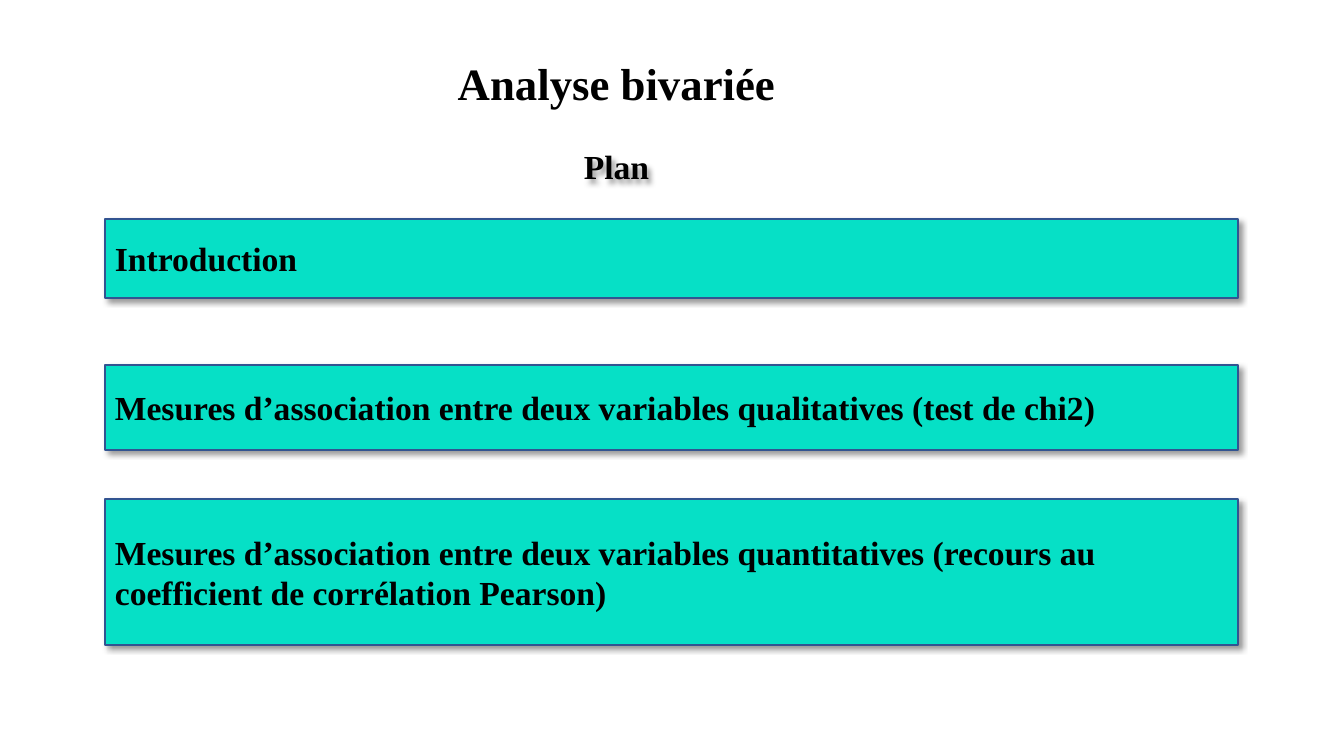
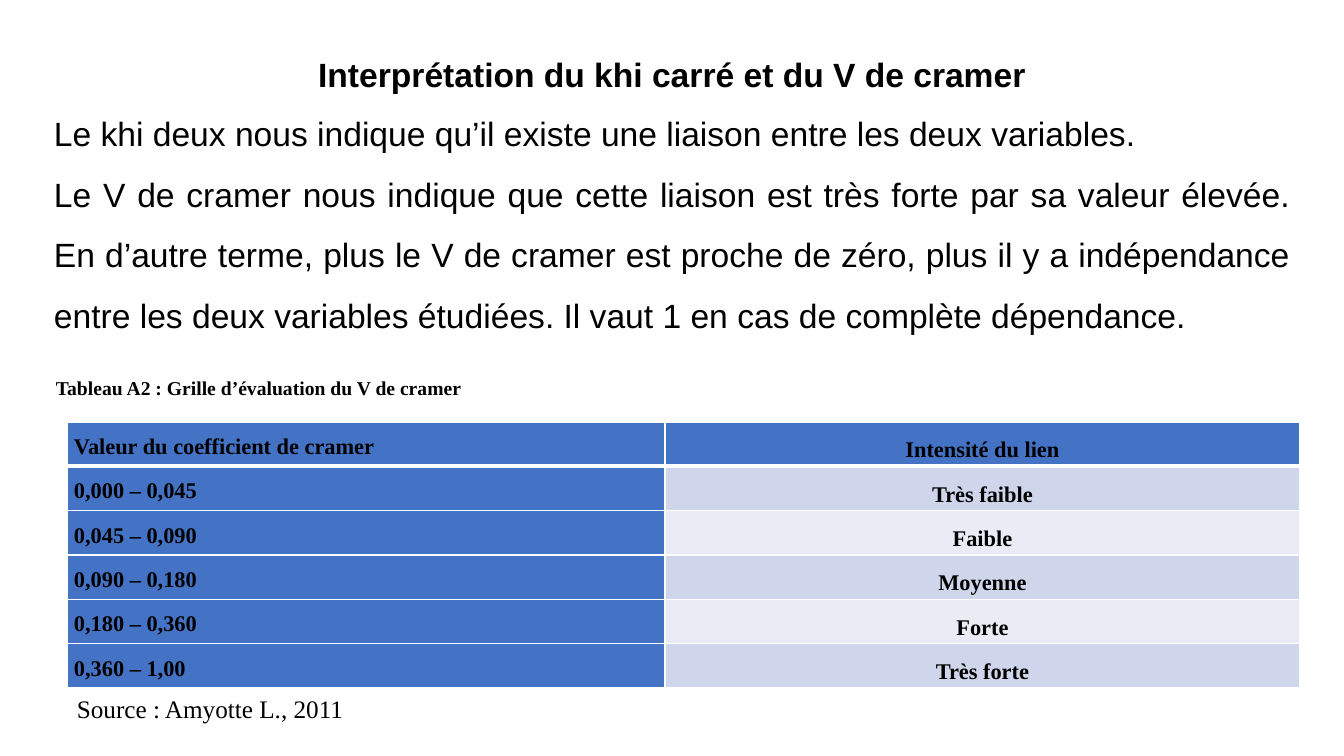
"""Build two slides on bivariate analysis: the plan and how to read Cramer's V."""
from lxml.etree import SubElement
from pptx import Presentation
from pptx.dml.color import RGBColor
from pptx.enum.shapes import MSO_SHAPE
from pptx.enum.text import MSO_ANCHOR, MSO_AUTO_SIZE, PP_ALIGN
from pptx.oxml.ns import qn
from pptx.util import Emu, Pt

SLIDE_W, SLIDE_H = 1344, 756
EMU_PER_PX = 12192000 / SLIDE_W
SERIF, SANS = "Times New Roman", "Arial"
COLORS = {
    "text": "000000", "bar": "06E0C6", "bar_line": "325491", "shadow": "000000",
    "head": "4472C4", "odd": "CFD5EA", "even": "E9EBF5", "border": "FFFFFF",
}

PLAN_TITLE = ("Analyse bivariée", (300, 43, 633, 79))
PLAN_SUBTITLE = ("Plan", (300, 127, 633, 79))
PLAN_BARS = [
    ("Introduction", 219, 79),
    ("Mesures d’association entre deux variables qualitatives (test de chi2)", 365, 85),
    ("Mesures d’association entre deux variables quantitatives "
     "(recours au coefficient de corrélation Pearson)", 499, 146),
]
BAR_LEFT, BAR_W = 105, 1133

CRAMER_TITLE = ("Interprétation du khi carré et du V de cramer", (44, 44, 1256, 60))
CRAMER_BODY = ([
    "Le khi deux nous indique qu’il existe une liaison entre les deux variables.",
    "Le V de cramer nous indique que cette liaison est très forte par sa valeur élevée. "
    "En d’autre terme, plus le V de cramer est proche de zéro, plus il y a indépendance "
    "entre les deux variables étudiées. Il vaut 1 en cas de complète dépendance.",
], (44, 90, 1256, 250))
CAPTION = ("Tableau A2 : Grille d’évaluation du V de cramer", (46, 371, 474, 34))
SOURCE = ("Source : Amyotte L., 2011", (67, 688, 672, 40))
GRID = [
    ("Valeur du coefficient de cramer", "Intensité du lien"),
    ("0,000 – 0,045", "Très faible"),
    ("0,045 – 0,090", "Faible"),
    ("0,090 – 0,180", "Moyenne"),
    ("0,180 – 0,360", "Forte"),
    ("0,360 – 1,00", "Très forte"),
]
GRID_BOX = (67, 422, 1233, 266)
GRID_COLS = (598, 635)


def px(length):
    return Emu(round(length * EMU_PER_PX))


def rgb(name):
    return RGBColor.from_string(COLORS[name])


def write(frame, lines, size, font=SERIF, bold=True, align=PP_ALIGN.LEFT,
          spacing=None, around=None):
    frame.text = "\n".join(lines)
    for paragraph in frame.paragraphs:
        paragraph.alignment = align
        if spacing:
            paragraph.line_spacing = spacing
        if around is not None:
            paragraph.space_before = paragraph.space_after = Pt(around)
        for run in paragraph.runs:
            run.font.name, run.font.size, run.font.bold = font, Pt(size), bold
            run.font.color.rgb = rgb("text")


def add_title_slide(deck, title, size, font):
    text, box = title
    slide = deck.slides.add_slide(deck.slide_layouts[5])
    holder = slide.shapes.title
    holder.left, holder.top, holder.width, holder.height = map(px, box)
    holder.text_frame.auto_size = MSO_AUTO_SIZE.NONE
    holder.text_frame.vertical_anchor = MSO_ANCHOR.MIDDLE
    write(holder.text_frame, [text], size, font, align=PP_ALIGN.CENTER)
    return slide


def add_text(slide, lines, box, size, anchor=MSO_ANCHOR.MIDDLE, **style):
    label = slide.shapes.add_textbox(*map(px, box))
    label.text_frame.word_wrap = True
    label.text_frame.vertical_anchor = anchor
    write(label.text_frame, lines, size, **style)
    return label


def cast_shadow(shape):
    shape.shadow.inherit = False
    effects = shape._element.spPr.find(qn("a:effectLst"))
    shadow = SubElement(effects, qn("a:outerShdw"), blurRad=str(Pt(4)), dist=str(Pt(3)),
                        dir="2700000", algn="tl", rotWithShape="0")
    color = SubElement(shadow, qn("a:srgbClr"), val=COLORS["shadow"])
    SubElement(color, qn("a:alpha"), val="40000")


def add_bar(slide, text, top, height):
    bar = slide.shapes.add_shape(MSO_SHAPE.RECTANGLE,
                                 *map(px, (BAR_LEFT, top, BAR_W, height)))
    bar.fill.solid()
    bar.fill.fore_color.rgb = rgb("bar")
    bar.line.color.rgb = rgb("bar_line")
    bar.line.width = Pt(1)
    cast_shadow(bar)
    bar.text_frame.vertical_anchor = MSO_ANCHOR.MIDDLE
    write(bar.text_frame, [text], 24)


def set_borders(cell, widths):
    properties = cell._tc.get_or_add_tcPr()
    for side, width in widths.items():
        line = SubElement(properties, qn(f"a:ln{side}"), w=str(Pt(width)))
        fill = SubElement(line, qn("a:solidFill"))
        SubElement(fill, qn("a:srgbClr"), val=COLORS["border"])


def add_grid(slide):
    table = slide.shapes.add_table(len(GRID), len(GRID_COLS), *map(px, GRID_BOX)).table
    for column, width in zip(table.columns, GRID_COLS):
        column.width = px(width)
    for r, values in enumerate(GRID):
        for c, value in enumerate(values):
            cell = table.cell(r, c)
            set_borders(cell, {"L": 1, "R": 1, "T": 3 if r == 1 else 1,
                               "B": 3 if r == 0 else 1})
            cell.fill.solid()
            band = "odd" if r % 2 else "even"
            cell.fill.fore_color.rgb = rgb("head" if r == 0 or c == 0 else band)
            cell.margin_left = cell.margin_right = px(7)
            cell.margin_top = cell.margin_bottom = 0
            cell.vertical_anchor = MSO_ANCHOR.MIDDLE if c else MSO_ANCHOR.TOP
            write(cell.text_frame, [value], 16, spacing=1.5, around=6,
                  align=PP_ALIGN.CENTER if c else PP_ALIGN.LEFT)


def build_plan(deck):
    slide = add_title_slide(deck, PLAN_TITLE, 32, SERIF)
    subtitle, box = PLAN_SUBTITLE
    cast_shadow(add_text(slide, [subtitle], box, 24, align=PP_ALIGN.CENTER))
    for bar in PLAN_BARS:
        add_bar(slide, *bar)


def build_cramer(deck):
    slide = add_title_slide(deck, CRAMER_TITLE, 24, SANS)
    add_text(slide, *CRAMER_BODY, 24, MSO_ANCHOR.BOTTOM, font=SANS, bold=False,
             align=PP_ALIGN.JUSTIFY, spacing=1.5)
    add_grid(slide)
    caption, box = CAPTION
    add_text(slide, [caption], box, 14, align=PP_ALIGN.JUSTIFY)
    source, box = SOURCE
    add_text(slide, [source], box, 18, MSO_ANCHOR.TOP, bold=False, align=PP_ALIGN.JUSTIFY)


def main():
    deck = Presentation()
    deck.slide_width, deck.slide_height = px(SLIDE_W), px(SLIDE_H)
    build_plan(deck)
    build_cramer(deck)
    deck.save("out.pptx")


if __name__ == "__main__":
    main()
